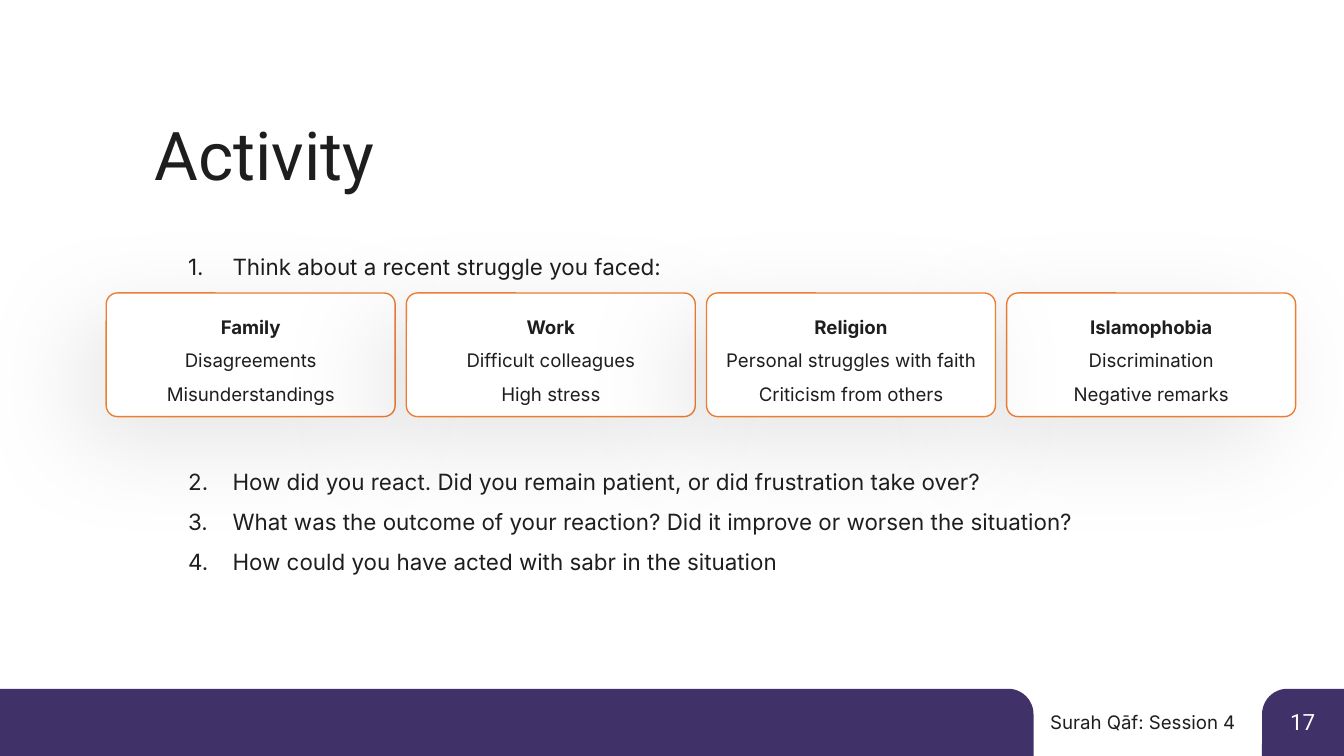
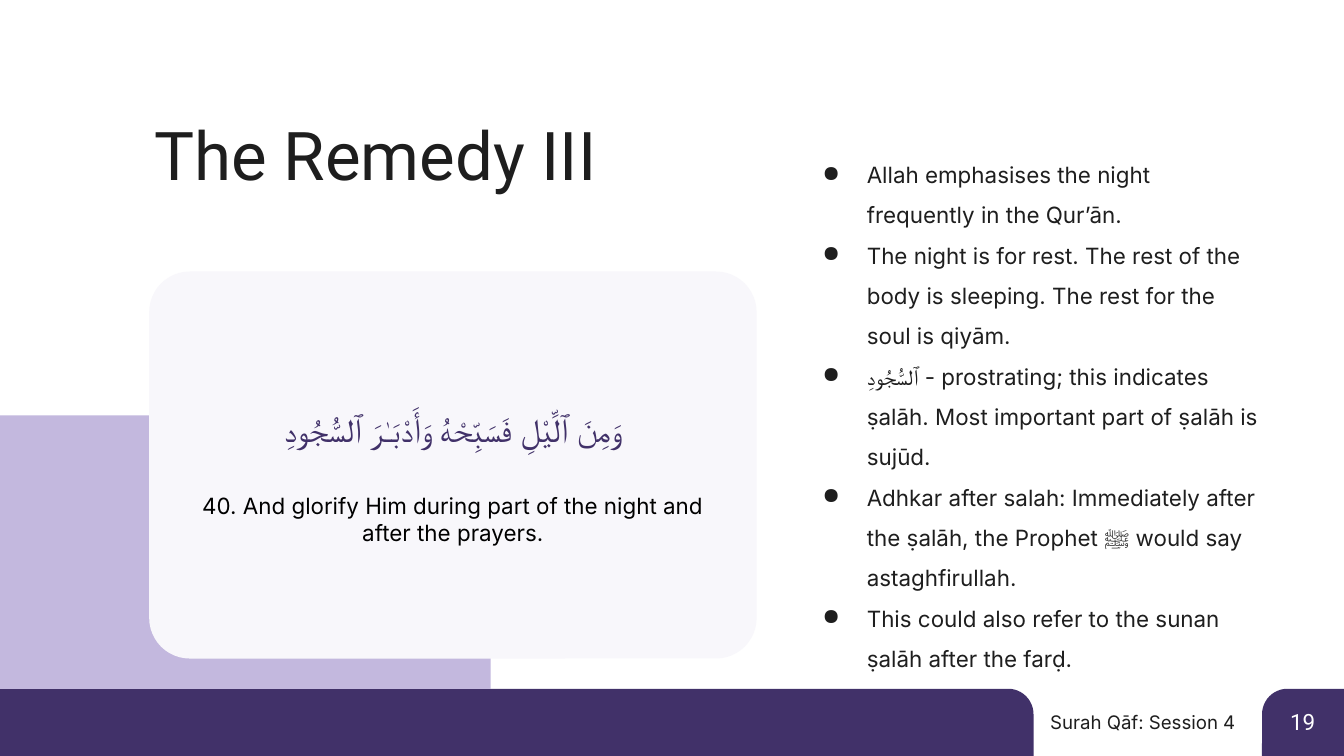
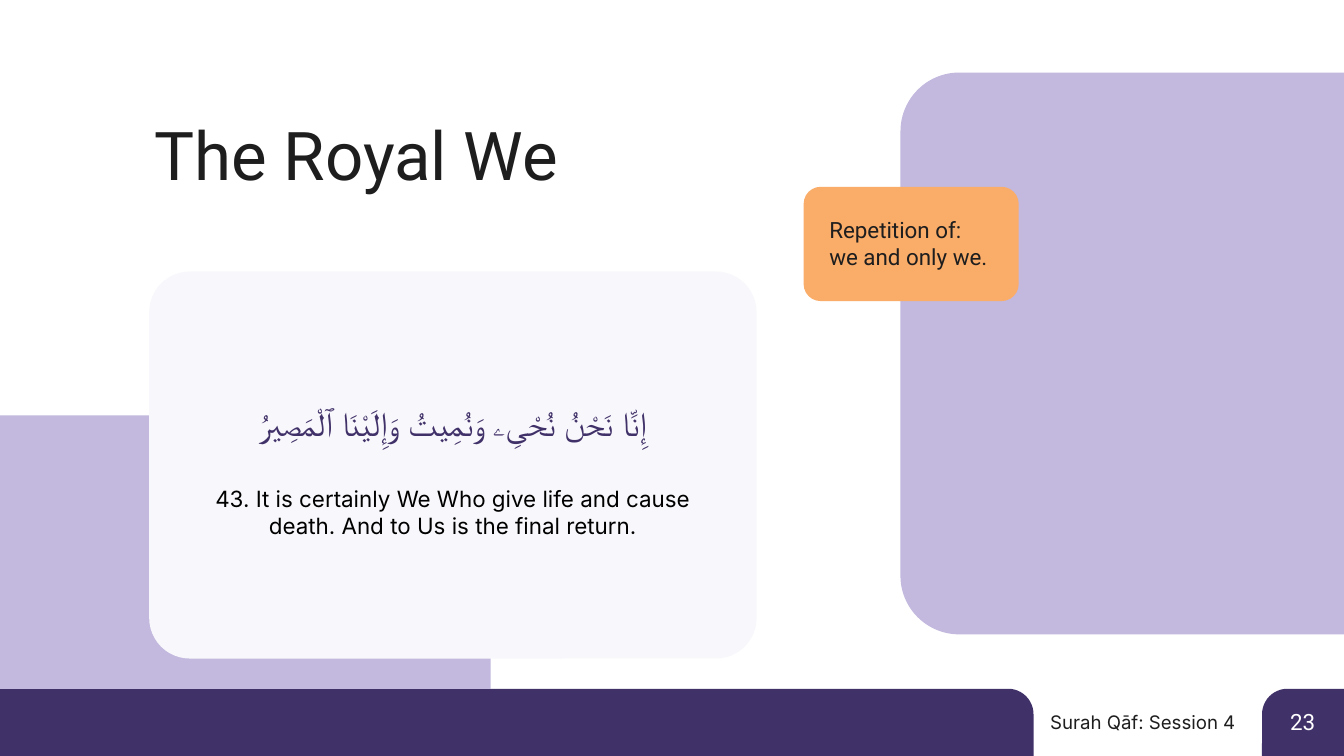
from copy import deepcopy

from lxml.etree import SubElement as Sub
from pptx import Presentation
from pptx.dml.color import RGBColor
from pptx.enum.shapes import MSO_SHAPE as Shape
from pptx.enum.text import MSO_ANCHOR as Anchor, MSO_AUTO_SIZE as Auto, PP_ALIGN as Align
from pptx.oxml.ns import qn
from pptx.util import Inches, Pt

# Colours and fonts
INK = RGBColor(0x1E, 0x1E, 0x1E)
BLACK = RGBColor(0x00, 0x00, 0x00)
WHITE = RGBColor(0xFF, 0xFF, 0xFF)
PLUM = RGBColor(0x41, 0x31, 0x69)
LILAC = RGBColor(0xC3, 0xB8, 0xDE)
MIST = RGBColor(0xF8, 0xF7, 0xFB)
PEACH = RGBColor(0xFA, 0xAC, 0x69)
RUST = RGBColor(0xED, 0x7D, 0x31)
SANS, HEAD, ARAB = "Inter", "Roboto", "Open Sans"

# Content
FOOT = "Surah Qāf: Session 4"
ASK = ["Think about a recent struggle you faced:"]
CARDS = [
    ("Family", "Disagreements", "Misunderstandings"),
    ("Work", "Difficult colleagues", "High stress"),
    ("Religion", "Personal struggles with faith", "Criticism from others"),
    ("Islamophobia", "Discrimination", "Negative remarks"),
]
STEPS = [
    "How did you react. Did you remain patient, or did frustration take over?",
    "What was the outcome of your reaction? Did it improve or worsen the situation?",
    "How could you have acted with sabr in the situation",
]
NIGHT = (
    "وَمِنَ ٱلَّيْلِ فَسَبِّحْهُ وَأَدْبَـٰرَ ٱلسُّجُودِ",
    "40. And glorify Him during part of the night and after the prayers.",
)
ROYAL = (
    "إِنَّا نَحْنُ نُحْىِۦ وَنُمِيتُ وَإِلَيْنَا ٱلْمَصِيرُ",
    "43. It is certainly We Who give life and cause death. And to Us is the final return.",
)
NOTES = [
    "Allah emphasises the night frequently in the Qur’ān.",
    "The night is for rest. The rest of the body is sleeping. The rest for the soul is qiyām.",
    [("ٱلسُّجُودِ", {"name": ARAB}),
     (" - prostrating; this indicates ṣalāh. Most important part of ṣalāh is sujūd.", {})],
    "Adhkar after salah: Immediately after the ṣalāh, the Prophet ﷺ would say astaghfirullah.",
    "This could also refer to the sunan ṣalāh after the farḍ.",
]
TAG = "Repetition of: we and only we."

# Formats
BODY = {"name": SANS, "size": Pt(12), "color": INK}
SMALL = {**BODY, "size": Pt(10)}
TITLE = {"name": HEAD, "size": Pt(36), "color": INK}
LABEL = {**BODY, "name": HEAD}
VERSE = {"name": ARAB, "size": Pt(18), "color": PLUM}
MID = {"alignment": Align.CENTER}
LOOSE = {"line_spacing": 1.5}

# Layout in inches
W, H = 10, 5.625
BAR = 0.5
CARD_W, CARD_H, CARD_X, CARD_END = 2.15, 0.92, 0.79, 9.64
CARD_STEP = (CARD_END - CARD_X - CARD_W) / (len(CARDS) - 1)
PANEL = (1.11, 2.02, 4.52, 2.88)
INSET = 0.24


def style(obj, vals):
    for key, val in vals.items():
        if key == "color":
            obj.color.rgb = val
        else:
            setattr(obj, key, val)


def add_run(para, words, form):
    run = para.add_run()
    run.text = words
    style(run.font, form)
    Sub(run._r.rPr, qn("a:cs"), typeface=form["name"])
    return run


def mark(para, start):
    """Give a paragraph a number counted from start, or a dot if start is None."""
    props = para._p.get_or_add_pPr()
    props.set("marL", str(Inches(0.5)))
    props.set("indent", str(Inches(-0.33)))
    Sub(Sub(props, qn("a:buClr")), qn("a:srgbClr"), val=str(INK))
    if start is None:
        Sub(props, qn("a:buChar"), char="●")
    else:
        Sub(props, qn("a:buAutoNum"), type="arabicPeriod", startAt=str(start))


def set_frame(frame, side, **vals):
    style(frame, {"word_wrap": True, "margin_left": Inches(side), "margin_right": Inches(side),
                  "margin_top": Inches(0.02), "margin_bottom": Inches(0.02), **vals})


def add_text(slide, at, items, form, para_form=None, grow=True, **bullet):
    frame = slide.shapes.add_textbox(*map(Inches, at)).text_frame
    fit = {"auto_size": Auto.SHAPE_TO_FIT_TEXT} if grow else {"vertical_anchor": Anchor.BOTTOM}
    set_frame(frame, 0.05, **fit)
    for i, item in enumerate(items):
        para = frame.add_paragraph() if i else frame.paragraphs[0]
        if bullet:
            mark(para, bullet["start"])
        style(para, para_form or {})
        for words, extra in [(item, {})] if isinstance(item, str) else item:
            add_run(para, words, {**form, **extra})


def add_block(slide, at, fill, turn, kind=Shape.ROUNDED_RECTANGLE):
    block = slide.shapes.add_shape(kind, *map(Inches, at))
    block.shadow.inherit = False
    block.adjustments[0] = turn
    block.fill.solid()
    block.fill.fore_color.rgb = fill
    block.line.fill.background()
    return block


def add_card(slide, at, lines):
    card = add_block(slide, at, WHITE, 0.091)
    card.line.color.rgb = RUST
    card.line.width = Pt(0.75)
    glow = Sub(card._element.spPr.find(qn("a:effectLst")), qn("a:outerShdw"),
               blurRad=str(Pt(55.9)), dist=str(Pt(20)), dir=str(135 * 60000),
               algn="tr", rotWithShape="0")
    Sub(Sub(glow, qn("a:srgbClr"), val=str(BLACK)), qn("a:alpha"), val="9000")
    set_frame(card.text_frame, 0.06, vertical_anchor=Anchor.MIDDLE)
    para = card.text_frame.paragraphs[0]
    style(para, {**MID, **LOOSE})
    for i, line in enumerate(lines):
        run = add_run(para, line, {**SMALL, "bold": i == 0})
        if i < len(lines) - 1:
            # The break takes the run's size, to keep the lines even
            para.add_line_break()
            para._p.findall(qn("a:br"))[-1].append(deepcopy(run._r.rPr))


def add_verse(slide, verse, top, low):
    """Panel with the Arabic verse above its translation."""
    left, wide = PANEL[0] + INSET, PANEL[2] - 2 * INSET
    add_block(slide, (0, 3.09, 3.65, H - BAR - 3.09), LILAC, 0)
    add_block(slide, PANEL, MIST, 0.105)
    add_text(slide, (left, low, wide, 0.45), verse[1:], {**BODY, "color": BLACK}, MID)
    add_text(slide, (left, top, wide, 0.45), verse[:1], VERSE, {**MID, **LOOSE}, grow=False)


def new_slide(deck, title, num):
    """Slide with the shared footer bands and title."""
    slide = deck.slides.add_slide(deck.slide_layouts[6])
    tab = add_block(slide, (W - 0.61, H - BAR, 0.61, BAR), PLUM, 0.379,
                    Shape.ROUND_1_RECTANGLE)
    tab._element.spPr.xfrm.set("flipH", "1")
    add_text(slide, (7.43, 5.27, 1.81, 0.22), [FOOT], SMALL, {"alignment": Align.RIGHT})
    add_text(slide, (9.55, 5.25, 0.3, 0.25), [str(num)], {**LABEL, "color": WHITE})
    add_block(slide, (0, H - BAR, 7.69, BAR), PLUM, 0.379, Shape.ROUND_1_RECTANGLE)
    add_text(slide, (1.1, 0.82, 6.8, 0.66), [title], TITLE)
    return slide


def main():
    deck = Presentation()
    deck.slide_width, deck.slide_height = Inches(W), Inches(H)

    # Activity: questions around a row of cards
    slide = new_slide(deck, "Activity", 17)
    add_text(slide, (1.18, 1.76, 6.99, 0.25), ASK, BODY, LOOSE, start=1)
    for col in (0, 1, 3, 2):
        add_card(slide, (CARD_X + col * CARD_STEP, 2.18, CARD_W, CARD_H), CARDS[col])
    add_text(slide, (1.18, 3.36, 6.99, 0.86), STEPS, BODY, LOOSE, start=2)

    # Remedy: verse and notes
    slide = new_slide(deck, "The Remedy III", 19)
    add_text(slide, (5.9, 1.08, 3.53, 3.89), NOTES, BODY, LOOSE, start=None)
    add_verse(slide, NIGHT, 2.91, 3.64)

    # Royal We: verse and tag on a side panel
    slide = new_slide(deck, "The Royal We", 23)
    add_verse(slide, ROYAL, 2.87, 3.59)
    add_block(slide, (6.7, 0.54, 4.08, 4.18), LILAC, 0.107)
    add_block(slide, (5.98, 1.39, 1.6, 0.85), PEACH, 0.149)
    add_text(slide, (6.12, 1.59, 1.31, 0.45), [TAG], LABEL)

    deck.save("out.pptx")


if __name__ == "__main__":
    main()
